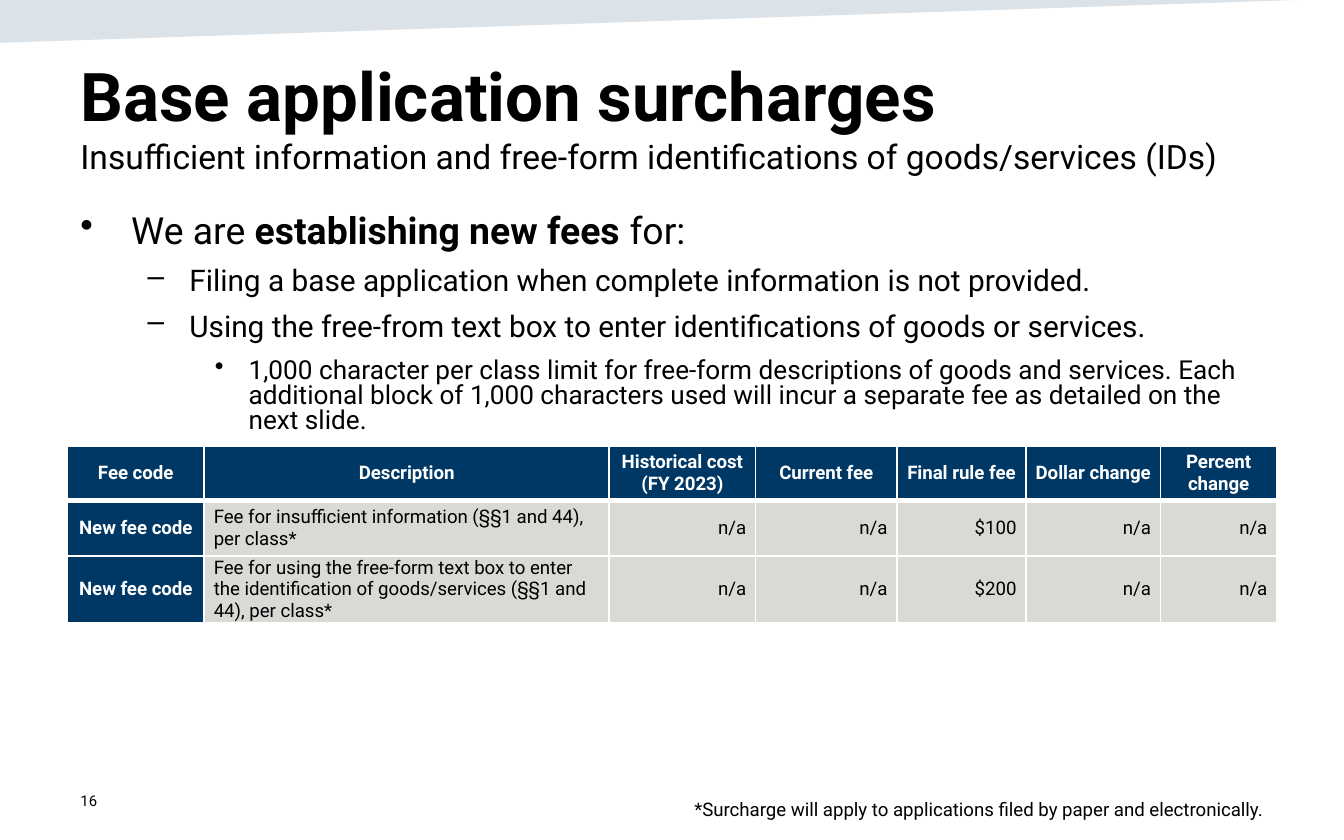
import pptx
import pptx.util
import pptx.dml.color
import pptx.enum.text
import pptx.oxml
import pptx.oxml.ns
from pptx.util import Cm, Pt

COLORS = {"black": "000000", "white": "FFFFFF", "navy": "003865", "gray": "D9D9D6", "band": "164469"}
ALIGN = pptx.enum.text.PP_ALIGN
ANCHOR = pptx.enum.text.MSO_ANCHOR
NAMESPACE = pptx.oxml.ns.nsdecls("a")


def write_runs(paragraph, runs, size, color="black", **formats):
    for name, value in formats.items():
        setattr(paragraph, name, value)
    for text, bold in runs:
        run = paragraph.add_run()
        run.text = text
        for name, value in {"name": "Roboto", "size": Pt(size), "bold": bold}.items():
            setattr(run.font, name, value)
        run.font.color.rgb = pptx.dml.color.RGBColor.from_string(COLORS[color])


def add_text_frame(left, top, width, height, anchor=ANCHOR.TOP):
    frame = slide.shapes.add_textbox(Cm(left), Cm(top), Cm(width), Cm(height)).text_frame
    for name, value in {"word_wrap": True, "vertical_anchor": anchor}.items():
        setattr(frame, name, value)
    return frame


presentation = pptx.Presentation()
presentation.slide_width = Cm(25.4)
presentation.slide_height = Cm(15.88)
slide = presentation.slides.add_slide(presentation.slide_layouts[6])

builder = slide.shapes.build_freeform(Cm(0), Cm(0))
builder.add_line_segments([(Cm(0), Cm(0.81)), (Cm(25.45), Cm(-0.03))], close=True)
band = builder.convert_to_shape()
band.shadow.inherit = False
band.line.fill.background()
band.fill.solid()
band.fill.fore_color.rgb = pptx.dml.color.RGBColor.from_string(COLORS["band"])
band_color = band.fill._xPr.find(".//" + pptx.oxml.ns.qn("a:srgbClr"))
band_color.append(pptx.oxml.parse_xml(f'<a:alpha {NAMESPACE} val="15000"/>'))

title_frame = add_text_frame(1.27, 0.86, 22.86, 2.64, ANCHOR.MIDDLE)
write_runs(title_frame.paragraphs[0], [("Base application surcharges", True)], 36)
subtitle = "Insufficient information and free-form identifications of goods/services (IDs)"
write_runs(title_frame.add_paragraph(), [(subtitle, False)], 18)

LEVELS = [
    {"size": 20, "margin": 0.96, "indent": -0.96, "bullet": "•"},
    {"size": 16, "margin": 2.06, "indent": -0.79, "bullet": "–"},
    {"size": 14, "margin": 3.18, "indent": -0.64, "bullet": "•"},
]
points = [
    (0, [("We are ", False), ("establishing new fees ", True), ("for:", False)]),
    (1, [("Filing a base application when complete information is not provided.", False)]),
    (1, [("Using the free-from text box to enter identifications of goods or services.", False)]),
    (2, [("1,000 character per class limit for free-form descriptions of goods and services. "
          "Each additional block of 1,000 characters used will incur a separate fee "
          "as detailed on the next slide.", False)]),
]
body_frame = add_text_frame(1.27, 3.96, 22.83, 5.03)
for index, (level, runs) in enumerate(points):
    paragraph = body_frame.paragraphs[0] if index == 0 else body_frame.add_paragraph()
    style = LEVELS[level]
    write_runs(paragraph, runs, style["size"], level=level, line_spacing=0.8, space_before=Pt(9))
    properties = paragraph._p.get_or_add_pPr()
    properties.set("marL", str(Cm(style["margin"])))
    properties.set("indent", str(Cm(style["indent"])))
    properties.append(pptx.oxml.parse_xml(f'<a:buChar {NAMESPACE} char="{style["bullet"]}"/>'))

rows = [
    ["Fee code", "Description", "Historical cost\n(FY 2023)", "Current fee", "Final rule fee",
     "Dollar change", "Percent change"],
    ["New fee code", "Fee for insufficient information (§§1 and 44), per class*",
     "n/a", "n/a", "$100", "n/a", "n/a"],
    ["New fee code", "Fee for using the free-form text box to enter the identification of "
     "goods/services (§§1 and 44), per class*", "n/a", "n/a", "$200", "n/a", "n/a"],
]
column_widths = [2.59, 7.65, 2.77, 2.67, 2.44, 2.54, 2.2]
table = slide.shapes.add_table(
    len(rows), len(column_widths), Cm(1.27), Cm(8.43), Cm(22.86), Cm(3.12)).table
for column, width in zip(table.columns, column_widths):
    column.width = Cm(width)
cell_formats = {
    "margin_left": Cm(0.18), "margin_right": Cm(0.18), "margin_top": 0, "margin_bottom": 0,
    "vertical_anchor": ANCHOR.MIDDLE,
}
for row_index, texts in enumerate(rows):
    table.rows[row_index].height = Cm(1.04)
    for column_index, text in enumerate(texts):
        cell = table.cell(row_index, column_index)
        for name, value in cell_formats.items():
            setattr(cell, name, value)
        widths = {"L": 1, "R": 1, "T": 3 if row_index == 1 else 1, "B": 3 if row_index == 0 else 1}
        for side, points_wide in widths.items():
            cell._tc.get_or_add_tcPr().append(pptx.oxml.parse_xml(
                f'<a:ln{side} {NAMESPACE} w="{Pt(points_wide)}"><a:solidFill>'
                f'<a:srgbClr val="{COLORS["white"]}"/></a:solidFill></a:ln{side}>'))
        heading = row_index == 0 or column_index == 0
        cell.fill.solid()
        cell.fill.fore_color.rgb = pptx.dml.color.RGBColor.from_string(
            COLORS["navy" if heading else "gray"])
        alignment = ALIGN.CENTER if heading else ALIGN.LEFT if column_index == 1 else ALIGN.RIGHT
        spacing = Pt(6 if row_index else 0)
        for line_index, line in enumerate(text.split("\n")):
            frame = cell.text_frame
            paragraph = frame.paragraphs[0] if line_index == 0 else frame.add_paragraph()
            write_runs(paragraph, [(line, heading)], 10, "white" if heading else "black",
                       alignment=alignment, space_before=spacing, space_after=spacing)

footnote = "*Surcharge will apply to applications filed by paper and electronically."
footnote_frame = add_text_frame(10.57, 14.96, 13.54, 0.69)
write_runs(footnote_frame.paragraphs[0], [(footnote, False)], 10, alignment=ALIGN.RIGHT)

number_frame = add_text_frame(1.27, 14.71, 5.72, 0.84, ANCHOR.MIDDLE)
write_runs(number_frame.paragraphs[0], [("16", False)], 8)

presentation.save("out.pptx")
